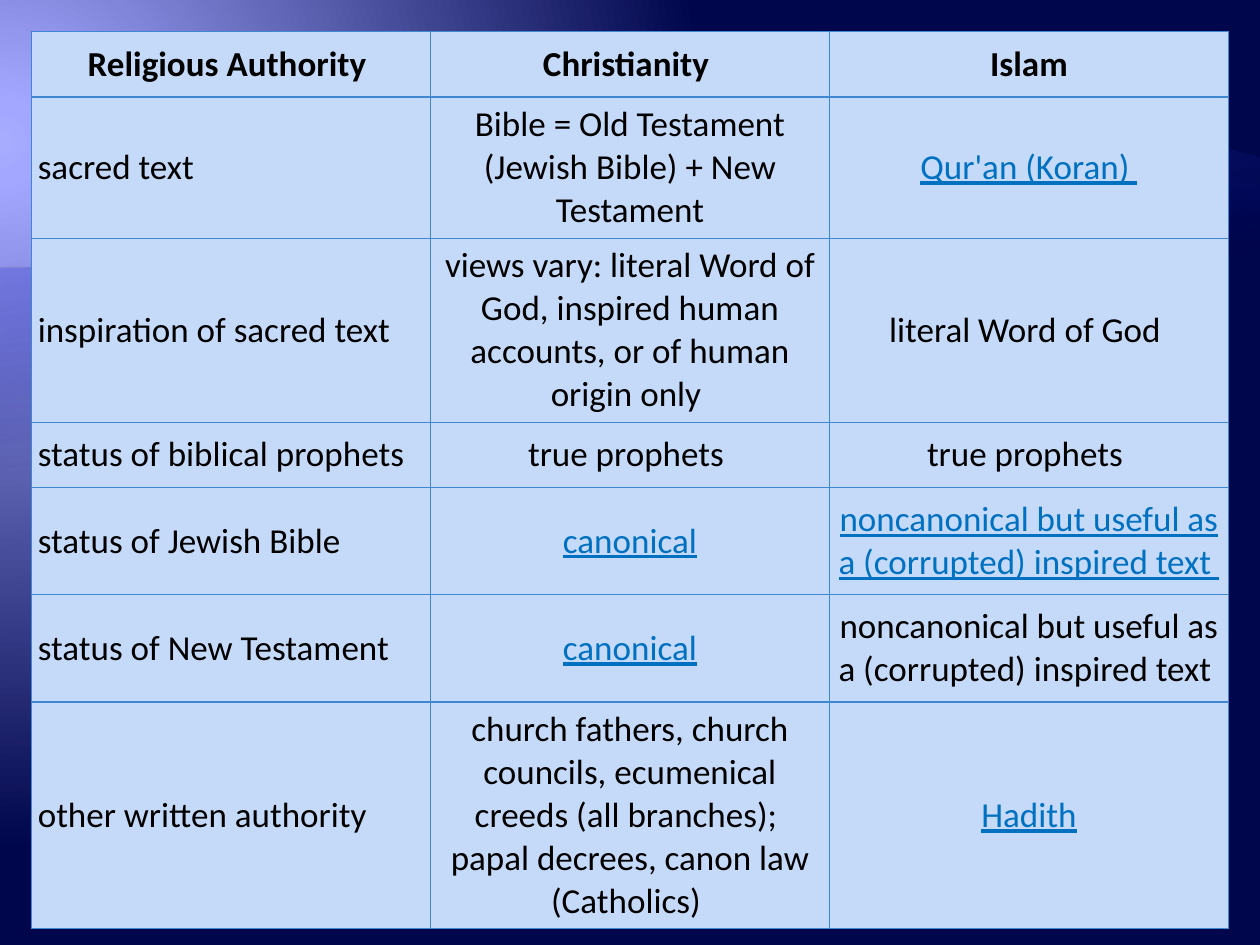
from lxml import etree
from pptx import Presentation
from pptx.dml.color import RGBColor
from pptx.enum.text import MSO_ANCHOR, PP_ALIGN
from pptx.oxml.ns import nsdecls, qn
from pptx.util import Inches, Pt

CENTER, LEFT = PP_ALIGN.CENTER, PP_ALIGN.LEFT
MIDDLE = MSO_ANCHOR.MIDDLE
FONT = "Calibri"
COLORS = {
    "glow": "A8ACFF", "haze": "A3A7FF", "night": "00064B",
    "deep": "000D9E", "violet": "797FFF",
    "cell": "C5D9F9", "border": "3F88D1", "text": "000000", "link": "0070C0",
}
HEADINGS = ["Religious Authority ", "Christianity ", "Islam"]
CORRUPTED = "noncanonical but useful as a (corrupted) inspired text "
COMPARISON = [
    ["sacred text", "Bible = Old Testament (Jewish Bible) + New Testament", "Qur'an (Koran) "],
    ["inspiration of sacred text",
     "views vary: literal Word of God, inspired human accounts, or of human origin only ",
     "literal Word of God "],
    ["status of biblical prophets", "true prophets ", "true prophets "],
    ["status of Jewish Bible", "canonical", CORRUPTED],
    ["status of New Testament", "canonical", CORRUPTED],
    ["other written authority",
     "church fathers, church councils, ecumenical creeds (all branches); \v"
     "papal decrees, canon law (Catholics) ", "Hadith"],
]
LINKED = {(1, 2), (4, 1), (4, 2), (5, 1), (6, 2)}
ROW_HEIGHTS = [0.52, 0.85, 1.17, 0.52, 0.85, 0.85, 1.49]


def gradient(stops, direction):
    marks = "".join(
        f'<a:gs pos="{position * 1000}"><a:srgbClr val="{COLORS[color]}">'
        f'<a:alpha val="{opacity * 1000}"/></a:srgbClr></a:gs>'
        for position, color, opacity in stops)
    return etree.fromstring(
        f'<a:gradFill {nsdecls("a")} rotWithShape="1"><a:gsLst>{marks}</a:gsLst>'
        f'{direction}</a:gradFill>')


def paint_background(slide):
    slide.background.fill.solid()
    properties = slide.element.find(".//" + qn("p:bgPr"))
    glow = gradient(
        [(0, "glow", 100), (5, "haze", 100), (90, "night", 100)],
        '<a:path path="circle"><a:fillToRect l="20000" t="30000" r="135000" b="100000"/></a:path>')
    properties.replace(properties[0], glow)


def bezier(points, steps=40):
    for step in range(1, steps + 1):
        t = step / steps
        weights = [(1 - t) ** 3, 3 * t * (1 - t) ** 2, 3 * t ** 2 * (1 - t), t ** 3]
        yield tuple(sum(w * p[axis] for w, p in zip(weights, points)) for axis in (0, 1))


def add_wave(slide, bottom, crest, color, opacity):
    outline = [(0, bottom), (0, 2.13), *bezier([(0, 2.13), *crest])]
    builder = slide.shapes.build_freeform(Inches(10), Inches(bottom), scale=1.0)
    builder.add_line_segments([(Inches(x), Inches(y)) for x, y in outline], close=True)
    wave = builder.convert_to_shape()
    wave.shadow.inherit = False
    wave.line.fill.background()
    wave.fill.solid()
    solid = wave.element.spPr.find(qn("a:solidFill"))
    shade = gradient([(65, "deep", 0), (100, color, opacity)],
                     '<a:lin ang="15600000" scaled="0"/>')
    wave.element.spPr.replace(solid, shade)


def add_borders(cell):
    properties = cell._tc.get_or_add_tcPr()
    for position, side in enumerate(("lnL", "lnR", "lnT", "lnB")):
        properties.insert(position, etree.fromstring(
            f'<a:{side} {nsdecls("a")} w="{Pt(0.75)}"><a:solidFill>'
            f'<a:srgbClr val="{COLORS["border"]}"/></a:solidFill></a:{side}>'))


def fill_cell(cell, text, align, heading, linked):
    cell.fill.solid()
    cell.fill.fore_color.rgb = RGBColor.from_string(COLORS["cell"])
    cell.vertical_anchor = MIDDLE
    cell.margin_left = cell.margin_right = Inches(0.05)
    cell.margin_top = cell.margin_bottom = Inches(0.05)
    add_borders(cell)
    cell.text_frame.text = text
    paragraph = cell.text_frame.paragraphs[0]
    paragraph.alignment = align
    for run in paragraph.runs:
        run.font.name = FONT
        run.font.size = Pt(20)
        run.font.bold = heading
        run.font.underline = linked
        run.font.color.rgb = RGBColor.from_string(COLORS["link" if linked else "text"])


def add_comparison(slide, left, top, width, height):
    rows = [HEADINGS, *COMPARISON]
    frame = slide.shapes.add_table(len(rows), len(HEADINGS), left, top, width, height)
    table = frame.table
    for column in table.columns:
        column.width = width // len(HEADINGS)
    for row, row_height in zip(table.rows, ROW_HEIGHTS):
        row.height = Inches(row_height)
    frame.height = height
    for r, texts in enumerate(rows):
        for c, text in enumerate(texts):
            align = LEFT if r and not c else CENTER
            fill_cell(table.cell(r, c), text, align, r == 0, (r, c) in LINKED)


def main():
    deck = Presentation()
    deck.slide_width, deck.slide_height = Inches(10), Inches(7.5)
    slide = deck.slides.add_slide(deck.slide_layouts[6])
    paint_background(slide)
    add_wave(slide, 7.33, [(5, 2.13), (5.34, 0.05), (10, 1.25)], "violet", 55)
    add_wave(slide, 6.37, [(5, 2.13), (5.98, 0.31), (10, 1.47)], "haze", 30)
    add_comparison(slide, Inches(0.25), Inches(0.25), Inches(9.5), Inches(7.05))
    deck.save("out.pptx")


if __name__ == "__main__":
    main()
